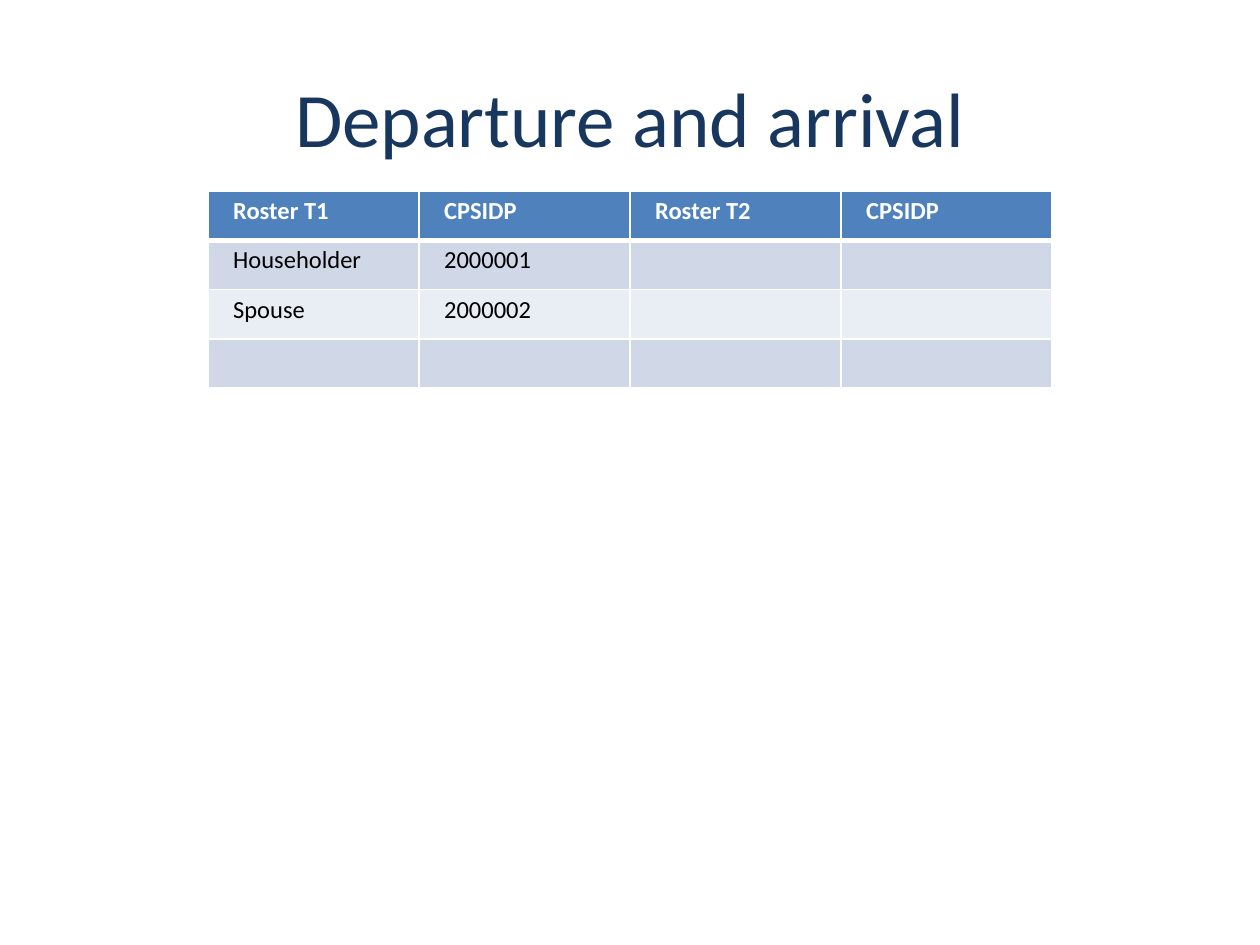
"""Build the departure and arrival roster slide."""
from dataclasses import dataclass

from lxml import etree
from pptx import Presentation
from pptx import util as u
from pptx.dml.color import RGBColor
from pptx.enum import text
from pptx.oxml import ns

TITLE = "Departure and arrival"
ROSTER = [
    ("Roster T1", "CPSIDP", "Roster T2", "CPSIDP"),
    ("Householder", "2000001", "", ""),
    ("Spouse", "2000002", "", ""),
    ("", "", "", ""),
]
WIDTH, HEIGHT = 10, 7.5
TITLE_AREA = (0.05, 0.04, 0.9, 1 / 6)
COLUMN, ROW, TABLE_TOP = 1.675, 0.39, 1.52


@dataclass(frozen=True)
class Theme:
    font: str = "Calibri"
    title: str = "17375E"
    header: str = "4F81BD"
    bands: tuple = ("D0D8E8", "E9EDF4")
    light: str = "FFFFFF"
    dark: str = "000000"
    title_size: int = 44
    cell_size: int = 14
    thin: int = 1
    thick: int = 3


THEME = Theme()


def write(frame, words, size, color, bold=False, align=text.PP_ALIGN.LEFT):
    """Put one formatted paragraph in a text frame."""
    para = frame.paragraphs[0]
    para.alignment = align
    if words:
        span = para.add_run()
        span.text = words
        span.font.name = THEME.font
        span.font.size = u.Pt(size)
        span.font.bold = bold
        span.font.color.rgb = RGBColor.from_string(color)


def add_borders(cell, top, bottom):
    """Draw the four borders of a cell, widths in points."""
    properties = cell._tc.get_or_add_tcPr()
    widths = {"L": THEME.thin, "R": THEME.thin, "T": top, "B": bottom}
    for place, (side, width) in enumerate(widths.items()):
        line = etree.Element(ns.qn(f"a:ln{side}"), w=str(u.Pt(width)))
        fill = etree.SubElement(line, ns.qn("a:solidFill"))
        etree.SubElement(fill, ns.qn("a:srgbClr"), val=THEME.light)
        properties.insert(place, line)


def add_title(page):
    """Add the centred slide title."""
    left, top, width, height = TITLE_AREA
    box = page.shapes.add_textbox(
        u.Inches(left * WIDTH), u.Inches(top * HEIGHT),
        u.Inches(width * WIDTH), u.Inches(height * HEIGHT))
    frame = box.text_frame
    frame.word_wrap = True
    frame.vertical_anchor = text.MSO_ANCHOR.MIDDLE
    write(frame, TITLE, THEME.title_size, THEME.title, align=text.PP_ALIGN.CENTER)


def add_roster(page):
    """Add the roster table, centred across the slide."""
    rows, columns = len(ROSTER), len(ROSTER[0])
    width = columns * COLUMN
    table = page.shapes.add_table(
        rows, columns, u.Inches((WIDTH - width) / 2), u.Inches(TABLE_TOP),
        u.Inches(width), u.Inches(rows * ROW)).table
    for r, record in enumerate(ROSTER):
        header = r == 0
        fill = THEME.header if header else THEME.bands[(r - 1) % 2]
        for c, words in enumerate(record):
            cell = table.cell(r, c)
            cell.margin_left = cell.margin_right = u.Inches(0.2)
            cell.margin_top = cell.margin_bottom = u.Inches(0.04)
            cell.fill.solid()
            cell.fill.fore_color.rgb = RGBColor.from_string(fill)
            add_borders(cell, top=THEME.thick if r == 1 else THEME.thin,
                        bottom=THEME.thick if header else THEME.thin)
            write(cell.text_frame, words, THEME.cell_size,
                  THEME.light if header else THEME.dark, bold=header)


def main():
    """Make and save the deck."""
    deck = Presentation()
    deck.slide_width, deck.slide_height = u.Inches(WIDTH), u.Inches(HEIGHT)
    page = deck.slides.add_slide(deck.slide_layouts[6])
    add_title(page)
    add_roster(page)
    deck.save("out.pptx")


if __name__ == "__main__":
    main()
